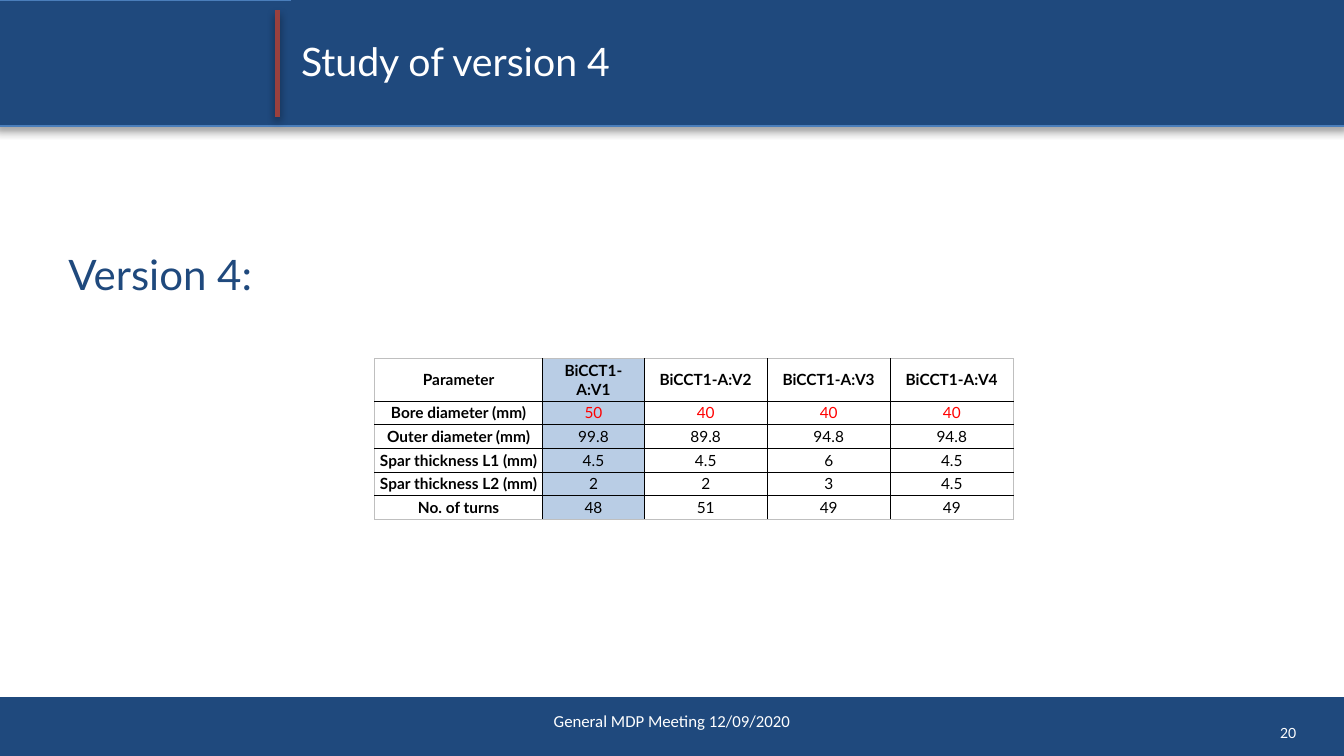
from lxml import etree
from pptx import Presentation
from pptx import util as u
from pptx.dml.color import RGBColor
from pptx.enum import shapes, text
from pptx.oxml.ns import qn

# Content
TITLE = "Study of version 4"
HEADING = "Version 4:"
FOOTER = "General MDP Meeting 12/09/2020"
PAGE_NUMBER = "20"
ROWS = [
    ("Parameter", "BiCCT1-A:V1", "BiCCT1-A:V2", "BiCCT1-A:V3", "BiCCT1-A:V4"),
    ("Bore diameter (mm)", "50", "40", "40", "40"),
    ("Outer diameter (mm)", "99.8", "89.8", "94.8", "94.8"),
    ("Spar thickness L1 (mm)", "4.5", "4.5", "6", "4.5"),
    ("Spar thickness L2 (mm)", "2", "2", "3", "4.5"),
    ("No. of turns", "48", "51", "49", "49"),
]
BORE_ROW, REFERENCE_COLUMN = 1, 1

# Look
COLORS = {"navy": "1F497D", "edge": "4A7EBB", "rule": "9A403E", "white": "FFFFFF",
          "black": "000000", "red": "FF0000", "pale": "B9CDE5", "grey": "BFBFBF"}
COLUMN_WIDTHS = [120.2, 72.5, 87.9, 87.9, 87.9]
HEADER_HEIGHT, ROW_HEIGHT = 30.6, 16.9


def rgb(name):
    return RGBColor.from_string(COLORS[name])


def add_color(parent, name, opacity=None):
    color = etree.SubElement(parent, qn("a:srgbClr"), val=COLORS[name])
    if opacity is not None:
        etree.SubElement(color, qn("a:alpha"), val=str(opacity * 1000))


def add_shadow(shape, opacity):
    effects = shape._element.spPr.find(qn("a:effectLst"))
    if effects is None:
        effects = etree.SubElement(shape._element.spPr, qn("a:effectLst"))
    shadow = etree.SubElement(effects, qn("a:outerShdw"), blurRad=str(u.Pt(6)),
                              dist=str(u.Pt(3)), dir="5400000", rotWithShape="0")
    add_color(shadow, "black", opacity)


def add_bar(page, left, top, width, height):
    bar = page.shapes.add_shape(shapes.MSO_SHAPE.RECTANGLE,
                                u.Pt(left), u.Pt(top), u.Pt(width), u.Pt(height))
    bar.shadow.inherit = False
    bar.fill.solid()
    bar.fill.fore_color.rgb = rgb("navy")
    bar.line.fill.background()
    return bar


def add_box(page, left, top, width, height):
    return page.shapes.add_textbox(u.Pt(left), u.Pt(top), u.Pt(width), u.Pt(height))


def style(para, size, color, align, face="Lato", bold=False):
    para.alignment = align
    para.font.size, para.font.name, para.font.bold = u.Pt(size), face, bold
    para.font.color.rgb = rgb(color)


def write(box, words, size, color="white", align=text.PP_ALIGN.LEFT, face="Lato",
          anchor=text.MSO_ANCHOR.MIDDLE, inset=7.2):
    frame = box.text_frame
    frame.text = words
    frame.word_wrap, frame.vertical_anchor = True, anchor
    frame.margin_left = frame.margin_right = u.Pt(7.2)
    frame.margin_top = frame.margin_bottom = u.Pt(inset)
    style(frame.paragraphs[0], size, color, align, face)
    return frame


def add_border(cell, side, outer):
    line = etree.SubElement(cell._tc.get_or_add_tcPr(), qn("a:ln" + side),
                            w=str(u.Pt(0.5 if outer else 1)))
    add_color(etree.SubElement(line, qn("a:solidFill")), "grey" if outer else "black")


def add_parameter_table(page):
    last_row, last_column = len(ROWS) - 1, len(COLUMN_WIDTHS) - 1
    heights = [HEADER_HEIGHT] + [ROW_HEIGHT] * last_row
    table = page.shapes.add_table(
        len(ROWS), len(COLUMN_WIDTHS), u.Pt(267.5), u.Pt(256),
        u.Pt(sum(COLUMN_WIDTHS)), u.Pt(sum(heights))).table
    table.first_row = table.horz_banding = False
    for column, width in zip(table.columns, COLUMN_WIDTHS):
        column.width = u.Pt(width)
    for row, height in zip(table.rows, heights):
        row.height = u.Pt(height)

    for r, row in enumerate(ROWS):
        for c, words in enumerate(row):
            cell = table.cell(r, c)
            cell.text = words
            cell.vertical_anchor = text.MSO_ANCHOR.MIDDLE
            cell.margin_left = cell.margin_right = u.Pt(3.6)
            cell.margin_top = cell.margin_bottom = u.Pt(1.8)
            is_label = r == 0 or c == 0
            color = "red" if r == BORE_ROW and not is_label else "black"
            style(cell.text_frame.paragraphs[0], 11, color,
                  text.PP_ALIGN.CENTER, bold=is_label)
            for side, outer in (("L", c == 0), ("R", c == last_column),
                                ("T", r == 0), ("B", r == last_row)):
                add_border(cell, side, outer)
            if c == REFERENCE_COLUMN:
                cell.fill.solid()
                cell.fill.fore_color.rgb = rgb("pale")
            else:
                cell.fill.background()


def main():
    deck = Presentation()
    deck.slide_width, deck.slide_height = u.Pt(960), u.Pt(540)
    page = deck.slides.add_slide(deck.slide_layouts[6])

    # Footer and header bars
    add_bar(page, -1.5, 498, 963, 43)
    header = add_bar(page, -3, 0, 964, 90)
    header.line.color.rgb = rgb("edge")
    header.line.width = u.Pt(1)
    add_shadow(header, 35)

    # Red rule beside the title
    rule = page.shapes.add_connector(shapes.MSO_CONNECTOR.STRAIGHT,
                                     u.Pt(198.2), u.Pt(83.5), u.Pt(198.2), u.Pt(7.2))
    rule.line.color.rgb = rgb("rule")
    rule.line.width = u.Pt(4)
    add_shadow(rule, 38)

    # Title, page number, heading and footer text
    write(add_bar(page, 208, 0, 752, 87), TITLE, 28)
    write(add_box(page, 893, 510, 40, 26.6), PAGE_NUMBER, 10,
          align=text.PP_ALIGN.RIGHT)
    heading = write(add_box(page, 41.8, 174.2, 877, 46.8), HEADING, 30, "navy",
                    anchor=text.MSO_ANCHOR.TOP)
    heading.paragraphs[0].line_spacing = 0.9
    write(add_box(page, 318, 500.5, 324, 28.8), FOOTER, 12,
          align=text.PP_ALIGN.CENTER, face="Calibri", inset=3.6)

    # Comparison of versions
    add_parameter_table(page)
    deck.save("out.pptx")


if __name__ == "__main__":
    main()
